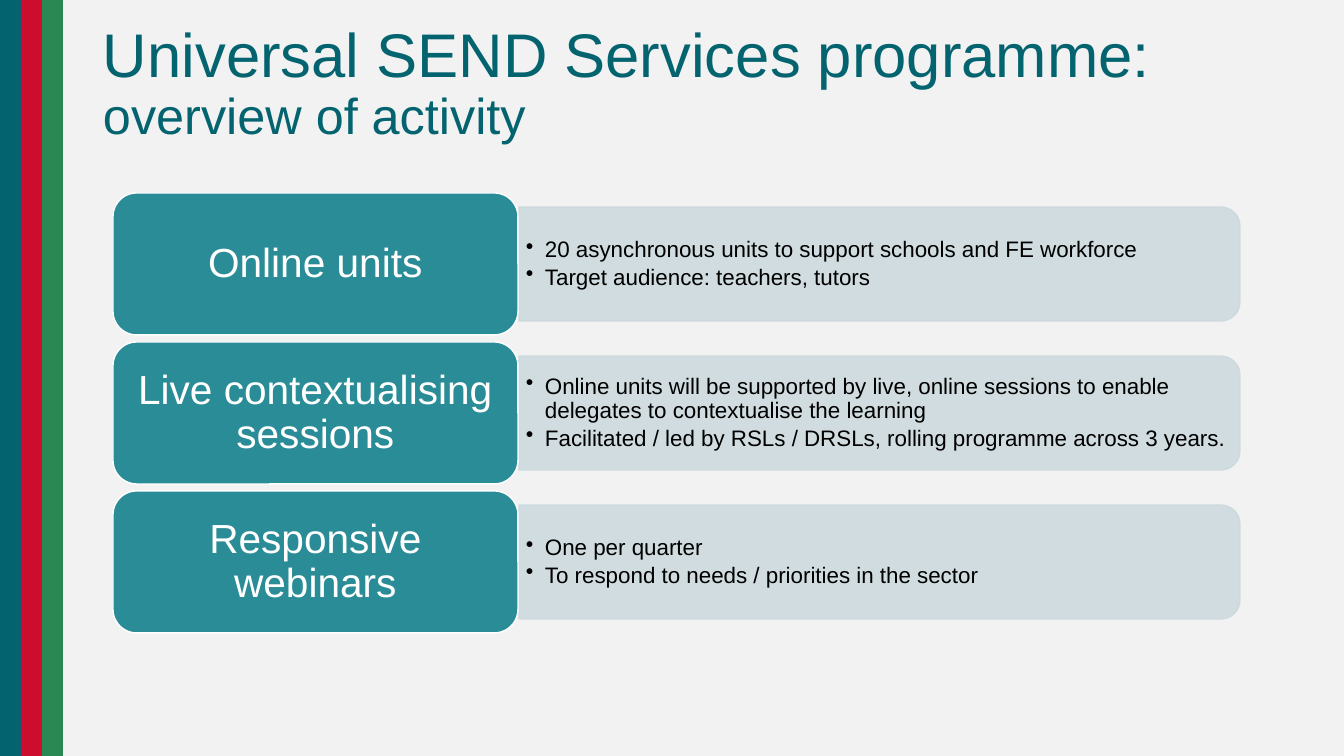
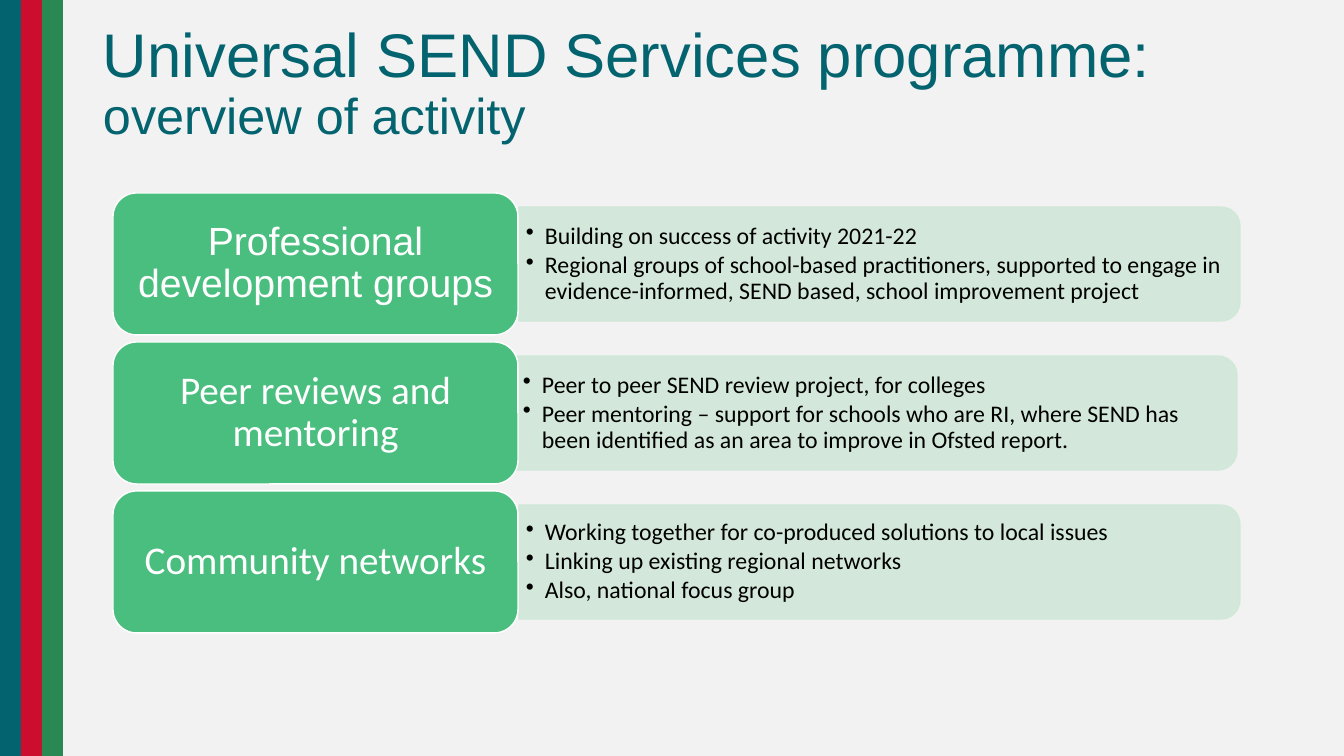
from dataclasses import dataclass

from pptx import Presentation
from pptx.dml.color import RGBColor
from pptx.enum.shapes import MSO_SHAPE
from pptx.enum.text import MSO_ANCHOR, MSO_AUTO_SIZE, PP_ALIGN
from pptx.oxml.ns import qn
from pptx.oxml.xmlchemy import OxmlElement
from pptx.presentation import Presentation as Deck
from pptx.shapes.autoshape import Shape
from pptx.slide import Slide
from pptx.text.text import TextFrame
from pptx.util import Emu, Pt

RECTANGLE = MSO_SHAPE.RECTANGLE
ROUNDED = MSO_SHAPE.ROUNDED_RECTANGLE
ROUNDED_TOP = MSO_SHAPE.ROUND_2_SAME_RECTANGLE
MIDDLE = MSO_ANCHOR.MIDDLE
NO_FIT = MSO_AUTO_SIZE.NONE
LEFT, CENTER = PP_ALIGN.LEFT, PP_ALIGN.CENTER

# Colours and fonts
TEAL = RGBColor(0x03, 0x64, 0x6F)
RED = RGBColor(0xCC, 0x0D, 0x2D)
GREEN = RGBColor(0x2A, 0x88, 0x52)
BACKGROUND = RGBColor(0xF2, 0xF2, 0xF2)
WHITE = RGBColor(0xFF, 0xFF, 0xFF)
BLACK = RGBColor(0x00, 0x00, 0x00)
LABEL_TEAL = RGBColor(0x2A, 0x8C, 0x96)
PANEL_TEAL = RGBColor(0xCD, 0xDA, 0xDD)
LABEL_GREEN = RGBColor(0x4A, 0xBE, 0x7E)
PANEL_GREEN = RGBColor(0xD0, 0xE8, 0xD8)
ARIAL, CALIBRI = "Arial", "Calibri"

# Layout in px
SLIDE_WIDTH, SLIDE_HEIGHT = 1344, 756
EMU_PER_PX = 12192000 / SLIDE_WIDTH
STRIPE_WIDTH = 21
LABEL_LEFT, LABEL_TOP, LABEL_WIDTH, LABEL_HEIGHT = 113, 193, 405, 142
ROW_PITCH = 149
PANEL_LEFT, PANEL_WIDTH, PANEL_HEIGHT = 519, 721, 114
BULLETS_WIDTH, BULLETS_HEIGHT = 716, 103
BULLET_INDENT = 19
LINE_SPACING = 0.9

TITLE_RUNS = (("Universal SEND Services programme: ", 44), ("overview of activity", 36))


@dataclass(frozen=True)
class Activity:
    label: str
    bullets: tuple[str, ...]
    label_font: str = ARIAL
    panel_shift: int = 0


@dataclass(frozen=True)
class Overview:
    label_color: RGBColor
    panel_color: RGBColor
    label_size: int
    bullet_size: int
    bullet_font: str
    bullet_margin: int
    activities: tuple[Activity, ...]


OVERVIEWS = (
    Overview(LABEL_TEAL, PANEL_TEAL, 29, 16, ARIAL, 3, (
        Activity("Online units", (
            "20 asynchronous units to support schools and FE workforce",
            "Target audience: teachers, tutors")),
        Activity("Live contextualising sessions", (
            "Online units will be supported by live, online sessions to enable "
            "delegates to contextualise the learning",
            "Facilitated / led by RSLs / DRSLs, rolling programme across 3 years.")),
        Activity("Responsive webinars", (
            "One per quarter",
            "To respond to needs / priorities in the sector")),
    )),
    Overview(LABEL_GREEN, PANEL_GREEN, 28, 17, CALIBRI, 4, (
        Activity("Professional development groups", (
            "Building on success of activity 2021-22",
            "Regional groups of school-based practitioners, supported to engage in "
            "evidence-informed, SEND based, school improvement project")),
        Activity("Peer reviews and mentoring", (
            "Peer to peer SEND review project, for colleges",
            "Peer mentoring – support for schools who are RI, where SEND has "
            "been identified as an area to improve in Ofsted report."),
            CALIBRI, -3),
        Activity("Community networks", (
            "Working together for co-produced solutions to local issues",
            "Linking up existing regional networks",
            "Also, national focus group"), CALIBRI),
    )),
)


def px(length: float) -> Emu:
    return Emu(round(length * EMU_PER_PX))


def add_block(slide: Slide, kind: MSO_SHAPE, box: tuple[float, float, float, float],
              fill: RGBColor, line: RGBColor | None = None) -> Shape:
    shape = slide.shapes.add_shape(kind, *map(px, box))
    shape.shadow.inherit = False
    shape.fill.solid()
    shape.fill.fore_color.rgb = fill
    if line is None:
        shape.line.fill.background()
    else:
        shape.line.color.rgb = line
        shape.line.width = Pt(1)
    return shape


def set_frame(frame: TextFrame, horizontal: int, vertical: int) -> None:
    frame.word_wrap = True
    frame.auto_size = NO_FIT
    frame.vertical_anchor = MIDDLE
    frame.margin_left = frame.margin_right = px(horizontal)
    frame.margin_top = frame.margin_bottom = px(vertical)


def add_run(paragraph, text: str, font: str, size: int, color: RGBColor) -> None:
    run = paragraph.add_run()
    run.text = text
    run.font.name = font
    run.font.size = Pt(size)
    run.font.color.rgb = color


def set_bullet(paragraph) -> None:
    properties = paragraph._p.get_or_add_pPr()
    properties.set("marL", str(px(BULLET_INDENT)))
    properties.set("indent", str(-px(BULLET_INDENT)))
    bullet = OxmlElement("a:buChar")
    bullet.set("char", "•")
    properties.append(bullet)


def set_opacity(shape: Shape, percent: int) -> None:
    for color in shape.element.spPr.iter(qn("a:srgbClr")):
        alpha = OxmlElement("a:alpha")
        alpha.set("val", str(percent * 1000))
        color.append(alpha)


def style_master(presentation: Deck, slide: Slide) -> None:
    """Put the background and the side stripes on the slide master."""
    master = presentation.slide_master
    master.background.fill.solid()
    master.background.fill.fore_color.rgb = BACKGROUND
    for index, color in enumerate((TEAL, RED, GREEN)):
        box = (index * STRIPE_WIDTH, 0, STRIPE_WIDTH, SLIDE_HEIGHT)
        stripe = add_block(slide, RECTANGLE, box, color)
        master.element.cSld.spTree.append(stripe.element)


def add_title(slide: Slide) -> None:
    title = slide.shapes.title
    title.left, title.top, title.width, title.height = map(px, (93, 12, 1159, 146))
    set_frame(title.text_frame, 10, 5)
    paragraph = title.text_frame.paragraphs[0]
    paragraph.alignment = LEFT
    paragraph.line_spacing = LINE_SPACING
    for text, size in TITLE_RUNS:
        add_run(paragraph, text, ARIAL, size, TEAL)


def add_panel(slide: Slide, overview: Overview, activity: Activity, middle: float) -> None:
    left = PANEL_LEFT + activity.panel_shift
    # The panel is an upright shape turned so that its round corners face right
    box = (left + (PANEL_WIDTH - PANEL_HEIGHT) / 2, middle - PANEL_WIDTH / 2,
           PANEL_HEIGHT, PANEL_WIDTH)
    panel = add_block(slide, ROUNDED_TOP, box, overview.panel_color, overview.panel_color)
    panel.rotation = 90
    set_opacity(panel, 90)

    text_box = slide.shapes.add_textbox(
        px(left), px(middle - BULLETS_HEIGHT / 2), px(BULLETS_WIDTH), px(BULLETS_HEIGHT))
    frame = text_box.text_frame
    set_frame(frame, 7, overview.bullet_margin)
    for index, text in enumerate(activity.bullets):
        paragraph = frame.add_paragraph() if index else frame.paragraphs[0]
        set_bullet(paragraph)
        paragraph.level = 1
        paragraph.line_spacing = LINE_SPACING
        paragraph.space_after = Pt(2.5)
        add_run(paragraph, text, overview.bullet_font, overview.bullet_size, BLACK)


def add_label(slide: Slide, overview: Overview, activity: Activity, top: int) -> None:
    box = (LABEL_LEFT, top, LABEL_WIDTH, LABEL_HEIGHT)
    label = add_block(slide, ROUNDED, box, overview.label_color, WHITE)
    set_frame(label.text_frame, 12, 6)
    paragraph = label.text_frame.paragraphs[0]
    paragraph.alignment = CENTER
    paragraph.line_spacing = LINE_SPACING
    add_run(paragraph, activity.label, activity.label_font, overview.label_size, WHITE)


def main() -> None:
    presentation = Presentation()
    presentation.slide_width = px(SLIDE_WIDTH)
    presentation.slide_height = px(SLIDE_HEIGHT)
    title_only = presentation.slide_layouts.get_by_name("Title Only")

    for number, overview in enumerate(OVERVIEWS):
        slide = presentation.slides.add_slide(title_only)
        if number == 0:
            style_master(presentation, slide)
        add_title(slide)
        for row, activity in enumerate(overview.activities):
            top = LABEL_TOP + row * ROW_PITCH
            add_panel(slide, overview, activity, top + LABEL_HEIGHT / 2)
            add_label(slide, overview, activity, top)

    presentation.save("out.pptx")


if __name__ == "__main__":
    main()
